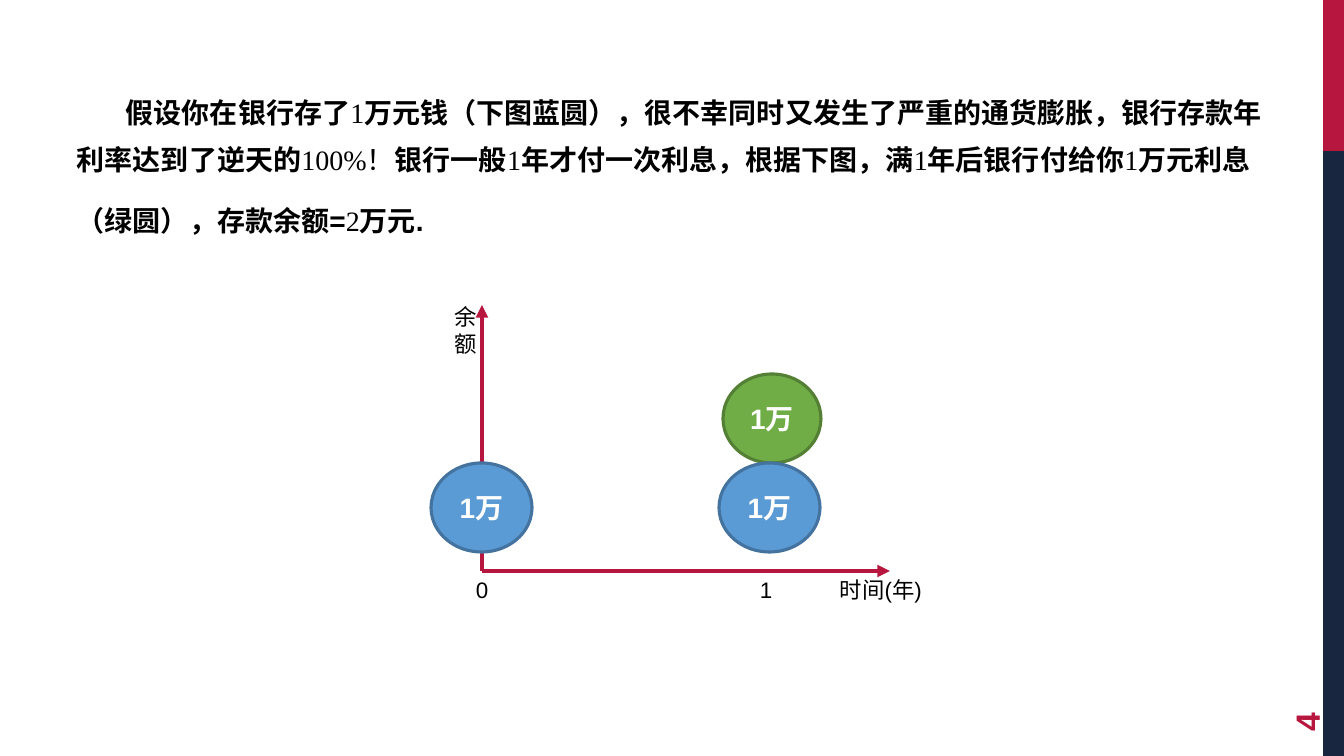
"""Build a slide that shows a bank balance doubling after one year."""
from pptx import Presentation
from pptx.dml.color import RGBColor
from pptx.enum.shapes import MSO_CONNECTOR, MSO_SHAPE
from pptx.enum.text import MSO_ANCHOR, PP_ALIGN
from pptx.oxml.ns import qn
from pptx.util import Pt
from lxml.etree import SubElement

SCALE = 914400 / 100.8
COLORS = {
    "red": "B7173E", "navy": "192640", "black": "000000", "white": "FFFFFF",
    "blue": "5B9BD5", "blue_edge": "43739E",
    "green": "70AD47", "green_edge": "538035",
}
STORY = [
    (49, ["假设你在银行存了", "1",
          "万元钱（下图蓝圆），很不幸同时又发生了严重的通货膨胀，银行存款年利率达到了逆天的",
          "100%！", "银行一般", "1", "年才付一次利息，根据下图，满", "1",
          "年后银行付给你", "1", "万元利息"]),
    (0, ["（绿圆），存款余额=", "2", "万元."]),
]
BANDS = [("red", 0, 151), ("navy", 151, 605)]
ORIGIN = (482, 571)
AXIS_ENDS = [(482, 305), (890, 571)]
CIRCLES = [
    ("blue", 431, 463, 101),
    ("green", 723, 374, 98),
    ("blue", 719, 463, 101),
]
CIRCLE_HEIGHT = 89
LABELS = [
    ("0", (462, 576, 40, 28), PP_ALIGN.CENTER),
    ("1", (746, 576, 40, 28), PP_ALIGN.CENTER),
    ("时间(年)", (840, 576, 130, 28), PP_ALIGN.LEFT),
    ("余额", (453, 303, 25, 54), PP_ALIGN.CENTER),
]


def px(value):
    return round(value * SCALE)


def color(name):
    return RGBColor.from_string(COLORS[name])


def add_span(para, text, size, ink, bold=False, font="Arial"):
    span = para.add_run()
    span.text = text
    span.font.size = Pt(size)
    span.font.name = font
    span.font.bold = bold
    span.font.color.rgb = color(ink)


def add_box(page, area, inset=True):
    box = page.shapes.add_textbox(*map(px, area))
    frame = box.text_frame
    frame.word_wrap = True
    if not inset:
        frame.margin_left = frame.margin_right = 0
        frame.margin_top = frame.margin_bottom = 0
    return box


def add_filled(page, kind, area, fill, edge=None):
    shape = page.shapes.add_shape(kind, *map(px, area))
    shape.shadow.inherit = False
    shape.fill.solid()
    shape.fill.fore_color.rgb = color(fill)
    if edge:
        shape.line.color.rgb = color(edge)
        shape.line.width = Pt(2.25)
    else:
        shape.line.fill.background()
    return shape


def add_story(page):
    frame = add_box(page, (67, 77, 1212, 229)).text_frame
    for index, (indent, parts) in enumerate(STORY):
        para = frame.add_paragraph() if index else frame.paragraphs[0]
        para.line_spacing = 1.4
        para.space_before = Pt(4)
        para.space_after = Pt(6)
        para._p.get_or_add_pPr().set("indent", str(px(indent)))
        for position, text in enumerate(parts):
            number = position % 2 == 1
            font = "Times New Roman" if number else "Arial"
            add_span(para, text, 20, "black", not number, font)


def add_axis(page, end):
    axis = page.shapes.add_connector(MSO_CONNECTOR.STRAIGHT, *map(px, ORIGIN + end))
    axis.line.color.rgb = color("red")
    axis.line.width = Pt(3)
    SubElement(axis.line._get_or_add_ln(), qn("a:tailEnd"), type="triangle")
    SubElement(axis._element.spPr, qn("a:effectLst"))


def add_circle(page, fill, left, top, width):
    area = (left, top, width, CIRCLE_HEIGHT)
    circle = add_filled(page, MSO_SHAPE.OVAL, area, fill, f"{fill}_edge")
    circle.text_frame.vertical_anchor = MSO_ANCHOR.MIDDLE
    para = circle.text_frame.paragraphs[0]
    para.alignment = PP_ALIGN.CENTER
    add_span(para, "1万", 20, "white", True)


def add_page_number(page):
    box = add_box(page, (1234, 642, 145, 53))
    box.rotation = 270
    box.text_frame.vertical_anchor = MSO_ANCHOR.MIDDLE
    add_span(box.text_frame.paragraphs[0], "4", 24, "red", True)


def main():
    deck = Presentation()
    deck.slide_width, deck.slide_height = px(1344), px(756)
    page = deck.slides.add_slide(deck.slide_layouts[6])
    for fill, top, height in BANDS:
        add_filled(page, MSO_SHAPE.RECTANGLE, (1323, top, 21, height), fill)
    add_story(page)
    add_page_number(page)
    for end in AXIS_ENDS:
        add_axis(page, end)
    for circle in CIRCLES:
        add_circle(page, *circle)
    for text, area, alignment in LABELS:
        para = add_box(page, area, inset=False).text_frame.paragraphs[0]
        para.alignment = alignment
        add_span(para, text, 16, "black")
    deck.save("out.pptx")


if __name__ == "__main__":
    main()
